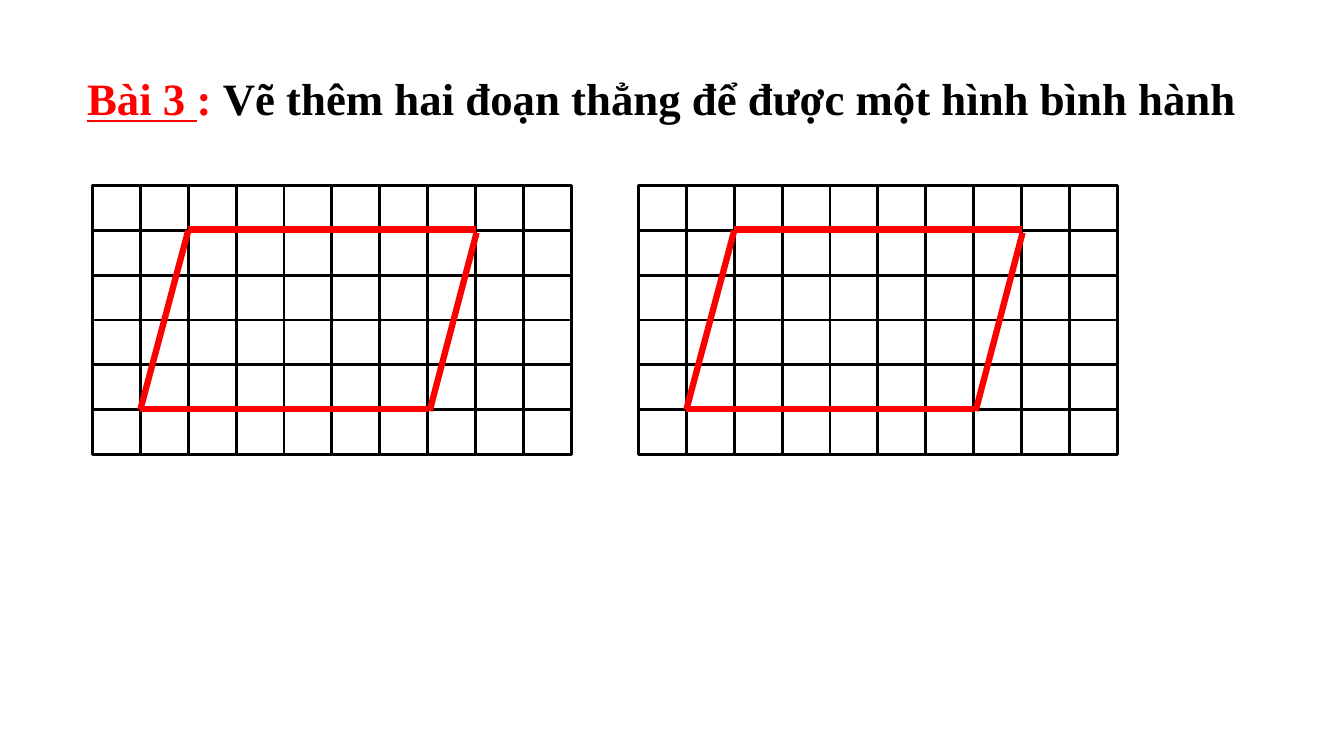
from lxml import etree
from pptx import Presentation
from pptx.dml.color import RGBColor
from pptx.enum.shapes import MSO_CONNECTOR, MSO_SHAPE
from pptx.enum.text import MSO_ANCHOR, MSO_AUTO_SIZE, PP_ALIGN
from pptx.oxml.ns import qn
from pptx.util import Cm, Pt

STRAIGHT = MSO_CONNECTOR.STRAIGHT
RECTANGLE = MSO_SHAPE.RECTANGLE
MIDDLE = MSO_ANCHOR.MIDDLE
NO_AUTOFIT = MSO_AUTO_SIZE.NONE
LEFT = PP_ALIGN.LEFT

RED = RGBColor(0xFF, 0x00, 0x00)
BLACK = RGBColor(0x00, 0x00, 0x00)
WHITE = RGBColor(0xFF, 0xFF, 0xFF)

FONT = "Times New Roman"
COLS, ROWS = 10, 6
TITLE_RUNS = [
    ("Bài 3 ", RED, True),
    (": ", RED, False),
    ("Vẽ thêm hai đoạn thẳng để được một hình bình hành", BLACK, False),
]
PARALLELOGRAM = [
    ((2, 0.98), (8, 0.98)),
    ((1, 5), (2, 1)),
    ((7.04, 5.03), (8.02, 1.05)),
    ((1, 4.98), (7, 4.98)),
]


def add_title(s, left, top, width, height):
    sp = s.shapes.title
    sp.left, sp.top, sp.width, sp.height = left, top, width, height
    tf = sp.text_frame
    tf.auto_size = NO_AUTOFIT
    tf.word_wrap = False
    tf.vertical_anchor = MIDDLE
    p = tf.paragraphs[0]
    p.alignment = LEFT
    for text, color, underline in TITLE_RUNS:
        r = p.add_run()
        r.text = text
        r.font.name = FONT
        r.font.size = Pt(32)
        r.font.bold = True
        r.font.underline = underline
        r.font.color.rgb = color


def add_grid(s, left, top, width, height):
    cell_w, cell_h = width / COLS, height / ROWS
    group = s.shapes.add_group_shape()
    for row in range(ROWS):
        for col in range(COLS):
            sp = group.shapes.add_shape(
                RECTANGLE,
                round(left + col * cell_w), round(top + row * cell_h),
                round(cell_w), round(cell_h))
            sp.shadow.inherit = False
            sp.fill.solid()
            sp.fill.fore_color.rgb = WHITE
            sp.line.color.rgb = BLACK
            sp.line.width = Pt(2)


def add_parallelogram(s, left, top, width, height):
    cell_w, cell_h = width / COLS, height / ROWS
    for (x1, y1), (x2, y2) in PARALLELOGRAM:
        side = s.shapes.add_connector(
            STRAIGHT,
            round(left + x1 * cell_w), round(top + y1 * cell_h),
            round(left + x2 * cell_w), round(top + y2 * cell_h))
        side.line.color.rgb = RED
        side.line.width = Pt(4.5)
        etree.SubElement(side._element.spPr, qn("a:effectLst"))


def add_figure(s, left, top, width, height):
    add_grid(s, left, top, width, height)
    add_parallelogram(s, left, top, width, height)


def main():
    prs = Presentation()
    prs.slide_width, prs.slide_height = Cm(33.87), Cm(19.05)
    s = prs.slides.add_slide(prs.slide_layouts[5])
    add_title(s, Cm(1.94), Cm(1.1), Cm(30.5), Cm(2.74))
    for left in (Cm(2.33), Cm(16.09)):
        add_figure(s, left, Cm(4.68), Cm(12.07), Cm(6.77))
    prs.save("out.pptx")


if __name__ == "__main__":
    main()
